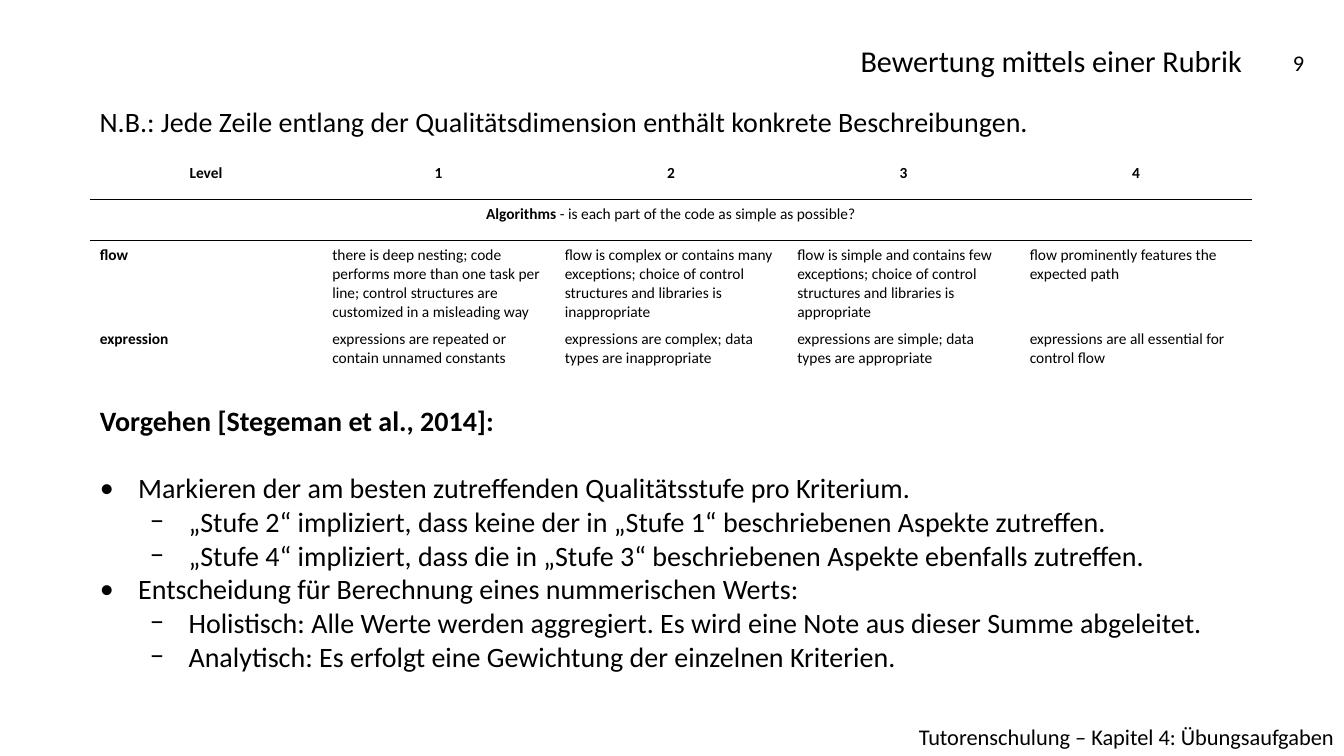
from dataclasses import dataclass

from lxml import etree
from pptx import Presentation
from pptx.dml.color import RGBColor
from pptx.enum import text as t
from pptx.oxml import ns
from pptx.util import Inches, Pt

# Content
TITLE = "Bewertung mittels einer Rubrik"
PAGE = "9"
FOOTER = "Tutorenschulung – Kapitel 4: Übungsaufgaben"
REMARK = "N.B.: Jede Zeile entlang der Qualitätsdimension enthält konkrete Beschreibungen."
LEVELS = ["Level", "1", "2", "3", "4"]
CATEGORY = ("Algorithms", " - is each part of the code as simple as possible?")
CRITERIA = [
    ["flow",
     "there is deep nesting; code performs more than one task per line; "
     "control structures are customized in a misleading way",
     "flow is complex or contains many exceptions; choice of control "
     "structures and libraries is inappropriate",
     "flow is simple and contains few exceptions; choice of control "
     "structures and libraries is appropriate",
     "flow prominently features the expected path"],
    ["expression",
     "expressions are repeated or contain unnamed constants",
     "expressions are complex; data types are inappropriate",
     "expressions are simple; data types are appropriate",
     "expressions are all essential for control flow"],
]
PROCEDURE = "Vorgehen [Stegeman et al., 2014]:"
STEPS = [
    (0, "Markieren der am besten zutreffenden Qualitätsstufe pro Kriterium."),
    (1, "„Stufe 2“ impliziert, dass keine der in „Stufe 1“ beschriebenen Aspekte zutreffen."),
    (1, "„Stufe 4“ impliziert, dass die in „Stufe 3“ beschriebenen Aspekte ebenfalls zutreffen."),
    (0, "Entscheidung für Berechnung eines nummerischen Werts:"),
    (1, "Holistisch: Alle Werte werden aggregiert. Es wird eine Note aus dieser Summe abgeleitet."),
    (1, "Analytisch: Es erfolgt eine Gewichtung der einzelnen Kriterien."),
]


@dataclass(frozen=True)
class Theme:
    font: str = "Calibri"
    ink: str = "000000"
    title: float = 21.6
    body: float = 20
    small: float = 16
    cell: float = 11
    rule: float = 1


THEME = Theme()
LEFT, WIDTH = 0.89, 11.53
ROW_HEIGHT = 0.41
BULLETS = [("•", 0.38), ("−", 0.88)]  # sign and indent per level
HANGING = 0.38
NO_GRID_STYLE = "{2D5ABB26-0587-4C30-8999-92F81FD0307C}"
ALIGN = t.PP_ALIGN


def add_run(paragraph, words, size, bold=False):
    run = paragraph.add_run()
    run.text = words
    run.font.name = THEME.font
    run.font.size = Pt(size)
    run.font.bold = bold
    run.font.color.rgb = RGBColor.from_string(THEME.ink)


def place(shape, left, top, width, height):
    shape.left, shape.top = Inches(left), Inches(top)
    shape.width, shape.height = Inches(width), Inches(height)


def add_label(slide, words, box, size, align, anchor=t.MSO_ANCHOR.TOP):
    frame = slide.shapes.add_textbox(*map(Inches, box)).text_frame
    frame.word_wrap = True
    frame.vertical_anchor = anchor
    frame.paragraphs[0].alignment = align
    add_run(frame.paragraphs[0], words, size)


def set_bullet(paragraph, level):
    sign, indent = BULLETS[level]
    paragraph.level = level
    props = paragraph._p.get_or_add_pPr()
    props.set("marL", str(Inches(indent)))
    props.set("indent", str(-Inches(HANGING)))
    etree.SubElement(props, ns.qn("a:buFont")).set("typeface", THEME.font)
    etree.SubElement(props, ns.qn("a:buChar")).set("char", sign)


def rule_below(cell):
    line = etree.Element(ns.qn("a:lnB"), w=str(Pt(THEME.rule)))
    fill = etree.SubElement(line, ns.qn("a:solidFill"))
    etree.SubElement(fill, ns.qn("a:srgbClr")).set("val", THEME.ink)
    cell._tc.get_or_add_tcPr().insert(0, line)


def add_rubric(slide):
    row_count, column_count = len(CRITERIA) + 2, len(LEVELS)
    frame = slide.shapes.add_table(
        row_count, column_count, Inches(LEFT), Inches(1.57),
        Inches(WIDTH), Inches(ROW_HEIGHT * row_count))
    rubric = frame.table
    rubric.first_row = rubric.horz_banding = False
    rubric._tbl.tblPr.find(ns.qn("a:tableStyleId")).text = NO_GRID_STYLE
    rubric.cell(1, 0).merge(rubric.cell(1, column_count - 1))

    category_row = [CATEGORY[0]] + [""] * (column_count - 1)
    for r, row in enumerate([LEVELS, category_row] + CRITERIA):
        for c, words in enumerate(row):
            cell = rubric.cell(r, c)
            cell.fill.background()
            if r < 2:
                rule_below(cell)
            if cell.is_spanned:
                continue
            paragraph = cell.text_frame.paragraphs[0]
            paragraph.alignment = ALIGN.CENTER if r < 2 else ALIGN.LEFT
            add_run(paragraph, words, THEME.cell, bold=r < 2 or c == 0)
    add_run(rubric.cell(1, 0).text_frame.paragraphs[0], CATEGORY[1], THEME.cell)


def add_procedure(body):
    place(body, LEFT, 3.95, WIDTH, 2.79)
    frame = body.text_frame
    frame.auto_size = t.MSO_AUTO_SIZE.NONE
    heading = frame.paragraphs[0]
    heading.space_before = Pt(0)
    heading.space_after = Pt(THEME.body * 1.22)  # one line of air
    props = heading._p.get_or_add_pPr()
    props.set("marL", "0")
    props.set("indent", "0")
    etree.SubElement(props, ns.qn("a:buNone"))
    add_run(heading, PROCEDURE, THEME.body, bold=True)
    for level, words in STEPS:
        step = frame.add_paragraph()
        step.space_before = Pt(0)
        set_bullet(step, level)
        add_run(step, words, THEME.body)


def main():
    deck = Presentation()
    deck.slide_width, deck.slide_height = Inches(13.33), Inches(7.5)
    slide = deck.slides.add_slide(deck.slide_layouts[1])

    # Footer
    add_label(slide, FOOTER, (4.86, 7.13, 8.47, 0.37), THEME.small, ALIGN.RIGHT)

    # Title and page number
    title = slide.shapes.title
    place(title, LEFT, 0.4, WIDTH, 0.44)
    title.text_frame.auto_size = t.MSO_AUTO_SIZE.NONE
    title.text_frame.vertical_anchor = t.MSO_ANCHOR.MIDDLE
    headline = title.text_frame.paragraphs[0]
    headline.alignment = ALIGN.RIGHT
    headline.line_spacing = 0.9
    add_run(headline, TITLE, THEME.title)
    add_label(slide, PAGE, (LEFT + WIDTH, 0.4, 0.92, 0.44), THEME.small,
              ALIGN.CENTER, t.MSO_ANCHOR.MIDDLE)

    # Remark, rubric and procedure
    add_label(slide, REMARK, (LEFT, 0.99, WIDTH, 0.44), THEME.body, ALIGN.LEFT)
    add_rubric(slide)
    add_procedure(slide.placeholders[1])

    deck.save("out.pptx")


if __name__ == "__main__":
    main()
